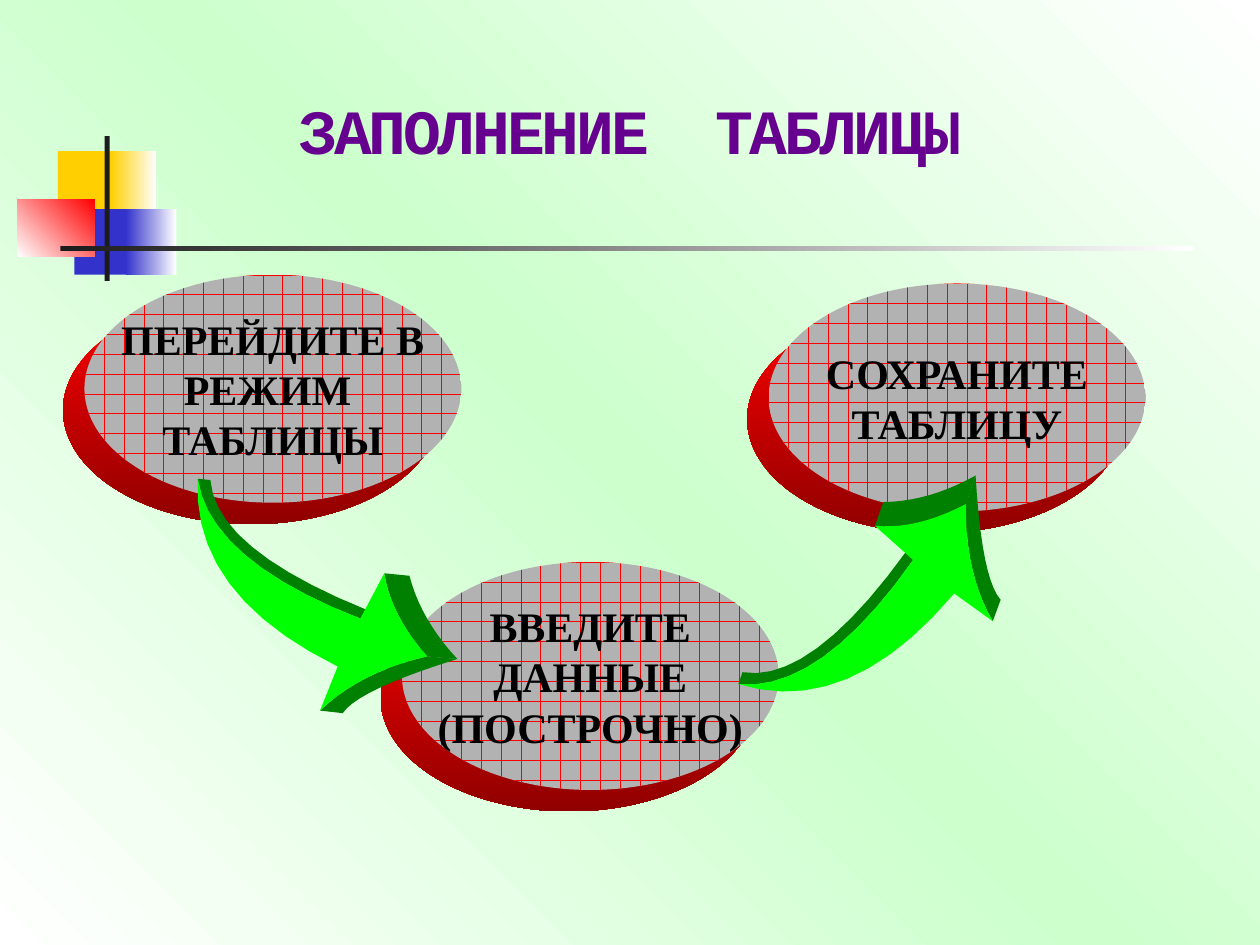
from copy import deepcopy
from math import cos, radians, sin

from pptx import Presentation
from pptx.dml.color import RGBColor
from pptx.enum.dml import MSO_PATTERN
from pptx.enum.shapes import MSO_SHAPE
from pptx.enum.text import MSO_ANCHOR, PP_ALIGN
from pptx.util import Inches, Pt

WHITE = RGBColor(0xFF, 0xFF, 0xFF)
BLACK = RGBColor(0x00, 0x00, 0x00)
PALE_GREEN = RGBColor(0xCC, 0xFF, 0xCC)
YELLOW = RGBColor(0xFF, 0xCF, 0x01)
BLUE = RGBColor(0x33, 0x33, 0xCC)
RED = RGBColor(0xFF, 0x00, 0x00)
DARK_RED = RGBColor(0x90, 0x00, 0x00)
CHARCOAL = RGBColor(0x1C, 0x1C, 0x1C)
GRAY = RGBColor(0xB2, 0xB2, 0xB2)
PURPLE = RGBColor(0x66, 0x00, 0x8F)
GREEN = RGBColor(0x00, 0xFF, 0x00)
DARK_GREEN = RGBColor(0x00, 0x80, 0x00)

TITLE = "ЗАПОЛНЕНИЕ  ТАБЛИЦЫ"
TITLE_BOX = (0.43, 0.68, 9.14, 0.94)
STEPS = [
    (0.67, 2.18, "ПЕРЕЙДИТЕ В\nРЕЖИМ \nТАБЛИЦЫ"),
    (3.19, 4.46, "ВВЕДИТЕ\nДАННЫЕ\n(ПОСТРОЧНО)"),
    (6.1, 2.25, "СОХРАНИТЕ\nТАБЛИЦУ"),
]
STEP_SIZE = (2.99, 1.81)
STEP_DEPTH = 0.17

ORNAMENT = [
    ((0.46, 1.2, 0.48, 0.52), [YELLOW], 0),
    ((0.88, 1.2, 0.36, 0.52), [YELLOW, WHITE], 0),
    ((0.59, 1.66, 0.46, 0.52), [BLUE], 0),
    ((1, 1.66, 0.4, 0.52), [BLUE, WHITE], 0),
    ((0.14, 1.58, 0.61, 0.46), [WHITE, RED], 315),
    ((0.83, 1.08, 0.04, 1.15), [CHARCOAL], 0),
    ((0.48, 1.95, 9, 0.04), [CHARCOAL, WHITE], 0),
]

TAIL, BACK_TAIL = (0, 0), (0.1, 0.01)
INNER_NECK, BACK_NECK = (1.29, 1.11), (1.34, 1.04)
OUTER_NECK = (1.11, 1.49)
UPPER_WING, BACK_UPPER_WING = (1.48, 0.75), (1.68, 0.77)
LOWER_WING, BACK_LOWER_WING = (0.97, 1.84), (1.15, 1.86)
TIP, BACK_TIP = (1.82, 1.41), (2.06, 1.43)
ARROWS = [((1.57, 3.8), 0), ((5.86, 5.43), -76.1)]
ARC_STEPS = 10


def arc(start, middle, end):
    control = [2 * m - (s + e) / 2 for s, m, e in zip(start, middle, end)]
    fractions = [step / ARC_STEPS for step in range(ARC_STEPS + 1)]
    return [
        tuple(
            (1 - t) ** 2 * s + 2 * t * (1 - t) * c + t**2 * e
            for s, c, e in zip(start, control, end)
        )
        for t in fractions
    ]


def arrow_parts():
    outer_shaft = arc(TAIL, (0.25, 0.83), OUTER_NECK)
    inner_shaft = arc(TAIL, (0.37, 0.6), INNER_NECK)
    lower_head = arc(LOWER_WING, (1.34, 1.58), TIP)
    upper_head = arc(UPPER_WING, (1.59, 1.08), TIP)
    thickness = [
        (inner_shaft, arc(BACK_TAIL, (0.43, 0.54), BACK_NECK)),
        (lower_head, arc(BACK_LOWER_WING, (1.44, 1.66), BACK_TIP)),
        (upper_head, arc(BACK_UPPER_WING, (1.82, 1.11), BACK_TIP)),
    ]
    sides = [(front + back[::-1], DARK_GREEN) for front, back in thickness]
    face = outer_shaft + lower_head + upper_head[::-1] + inner_shaft[:0:-1]
    return sides + [(face, GREEN)]


def paint(fill, colors, angle=0):
    if len(colors) == 1:
        fill.solid()
        fill.fore_color.rgb = colors[0]
        return
    fill.gradient()
    fill.gradient_angle = (360 - angle) % 360
    for stop, color in zip(fill.gradient_stops, colors):
        stop.color.rgb = color


def paint_background(slide):
    fill = slide.background.fill
    fill.gradient()
    stops = slide.element.xpath(".//p:bg//a:gsLst")[0]
    middle = deepcopy(stops[0])
    middle.set("pos", "50000")
    stops.insert(1, middle)
    fill.gradient_angle = 45
    for stop, color in zip(fill.gradient_stops, (WHITE, PALE_GREEN, WHITE)):
        stop.color.rgb = color


def finish(shape, colors, angle=0):
    shape.shadow.inherit = False
    shape.line.fill.background()
    paint(shape.fill, colors, angle)


def add_preset(slide, kind, box, colors, angle=0):
    shape = slide.shapes.add_shape(kind, *map(Inches, box))
    finish(shape, colors, angle)
    return shape


def write(shape, text, size, font_name, color):
    frame = shape.text_frame
    frame.word_wrap = False
    frame.text = text
    for paragraph in frame.paragraphs:
        paragraph.alignment = PP_ALIGN.CENTER
        for run in paragraph.runs:
            run.font.size = Pt(size)
            run.font.name = font_name
            run.font.bold = True
            run.font.color.rgb = color


def add_title(slide):
    title = slide.shapes.add_textbox(*map(Inches, TITLE_BOX))
    write(title, TITLE, 36, "Courier New", PURPLE)
    for properties in title.text_frame._txBody.xpath(".//a:rPr"):
        properties.set("spc", "-180")


def add_step(slide, left, top, text):
    side_box = (left - STEP_DEPTH, top + STEP_DEPTH, *STEP_SIZE)
    add_preset(slide, MSO_SHAPE.OVAL, side_box, [RED, DARK_RED], 90)
    face = add_preset(slide, MSO_SHAPE.OVAL, (left, top, *STEP_SIZE), [GRAY])
    face.fill.patterned()
    face.fill.pattern = MSO_PATTERN.DOTTED_GRID
    face.fill.fore_color.rgb = RED
    face.fill.back_color.rgb = GRAY
    face.text_frame.vertical_anchor = MSO_ANCHOR.MIDDLE
    write(face, text, 24, "Times New Roman", BLACK)


def add_arrow(slide, origin, angle):
    cosine, sine = cos(radians(angle)), sin(radians(angle))
    left, top = origin
    for outline, color in arrow_parts():
        points = [
            (Inches(left + x * cosine - y * sine), Inches(top + x * sine + y * cosine))
            for x, y in outline
        ]
        builder = slide.shapes.build_freeform(*points[0])
        builder.add_line_segments(points[1:], close=True)
        finish(builder.convert_to_shape(), [color])


def main():
    presentation = Presentation()
    presentation.slide_width, presentation.slide_height = Inches(10), Inches(7.5)
    slide = presentation.slides.add_slide(presentation.slide_layouts[6])
    paint_background(slide)
    for box, colors, angle in ORNAMENT:
        add_preset(slide, MSO_SHAPE.RECTANGLE, box, colors, angle)
    add_title(slide)
    for step in STEPS:
        add_step(slide, *step)
    for arrow in ARROWS:
        add_arrow(slide, *arrow)
    presentation.save("out.pptx")


if __name__ == "__main__":
    main()
